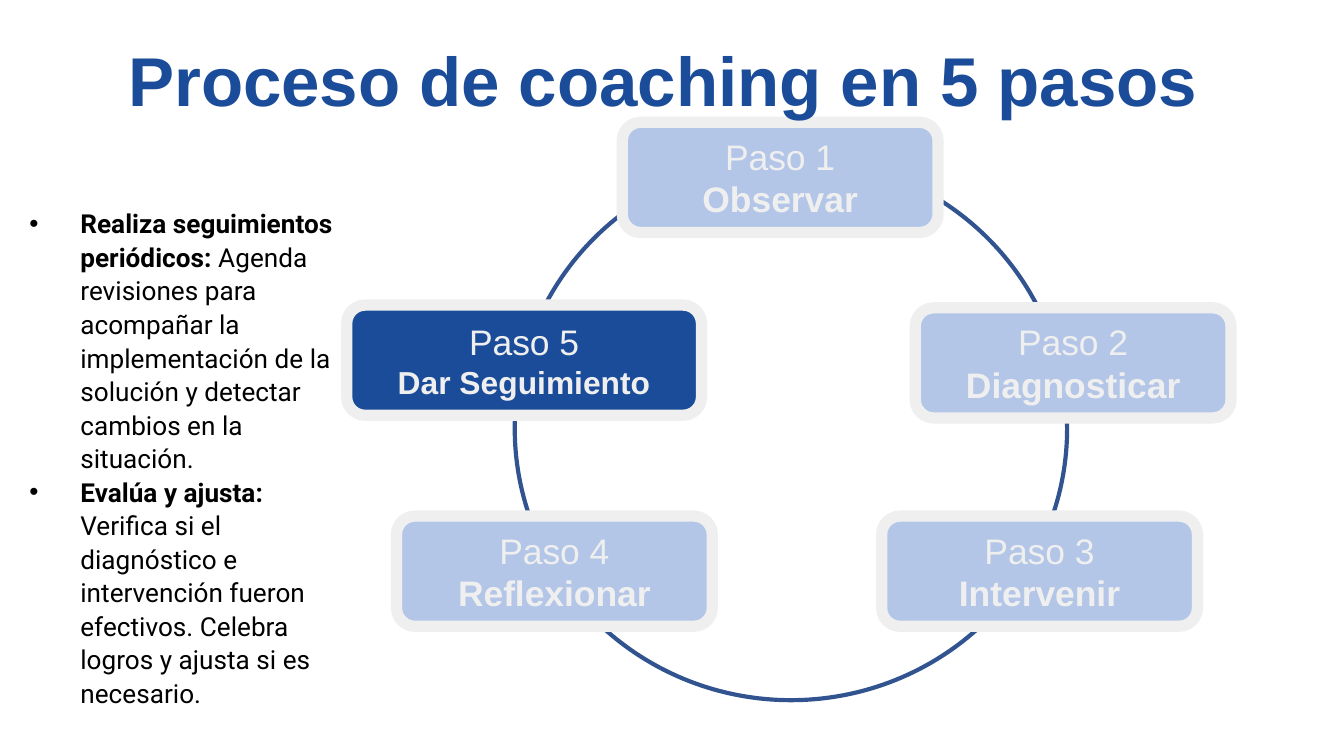
import pptx
import pptx.dml.color
import pptx.enum.shapes
import pptx.enum.text
import pptx.oxml.ns
import pptx.util
from lxml import etree

Inches = pptx.util.Inches
Pt = pptx.util.Pt
RGBColor = pptx.dml.color.RGBColor
MSO_SHAPE = pptx.enum.shapes.MSO_SHAPE
PP_ALIGN = pptx.enum.text.PP_ALIGN
MSO_ANCHOR = pptx.enum.text.MSO_ANCHOR
MSO_AUTO_SIZE = pptx.enum.text.MSO_AUTO_SIZE
qn = pptx.oxml.ns.qn

BLUE = RGBColor(0x1A, 0x4C, 0x99)
PALE_BLUE = RGBColor(0xB3, 0xC6, 0xE7)
RING_BLUE = RGBColor(0x31, 0x53, 0x8F)
LIGHT_GRAY = RGBColor(0xEF, 0xEF, 0xEF)
BLACK = RGBColor(0, 0, 0)


def add_run(p, text, *, size, color, font="Arial", bold=False):
    r = p.add_run()
    r.text = text
    r.font.name = font
    r.font.size = Pt(size)
    r.font.bold = bold
    r.font.color.rgb = color


def add_bullet(p, indent=0.38, tab=0.5):
    pPr = p._p.get_or_add_pPr()
    pPr.set("marL", str(Inches(indent)))
    pPr.set("indent", str(-Inches(indent)))
    clr = etree.SubElement(pPr, qn("a:buClr"))
    etree.SubElement(clr, qn("a:srgbClr"), val=str(BLACK))
    etree.SubElement(pPr, qn("a:buFont"), typeface="Arial")
    etree.SubElement(pPr, qn("a:buChar"), char="•")
    tabs = etree.SubElement(pPr, qn("a:tabLst"))
    etree.SubElement(tabs, qn("a:tab"), pos=str(Inches(tab)), algn="l")


class Slide:
    step_height = 0.82
    step_size = 19
    body_size = 14
    title_size = 37

    def __init__(self, prs):
        self.s = prs.slides.add_slide(prs.slide_layouts[6])

    def shape(self, kind, x, y, w, h, line, width, fill=None):
        sp = self.s.shapes.add_shape(kind, Inches(x), Inches(y), Inches(w), Inches(h))
        sp.shadow.inherit = False
        sp.line.color.rgb = line
        sp.line.width = Pt(width)
        if fill is None:
            sp.fill.background()
        else:
            sp.fill.solid()
            sp.fill.fore_color.rgb = fill
        return sp

    def margins(self, tf, side, top):
        tf.word_wrap = True
        tf.margin_left = tf.margin_right = Inches(side)
        tf.margin_top = tf.margin_bottom = Inches(top)

    def ring(self, x, y, w, h):
        self.shape(MSO_SHAPE.OVAL, x, y, w, h, RING_BLUE, 2.25)

    def step(self, number, name, x, y, w=2.35, fill=PALE_BLUE, name_size=step_size):
        sp = self.shape(MSO_SHAPE.ROUNDED_RECTANGLE, x, y, w, self.step_height,
                        LIGHT_GRAY, 6, fill)
        tf = sp.text_frame
        self.margins(tf, 0.1, 0.1)
        tf.vertical_anchor = MSO_ANCHOR.MIDDLE
        p = tf.paragraphs[0]
        p.alignment = PP_ALIGN.CENTER
        add_run(p, f"Paso {number}", size=self.step_size, color=LIGHT_GRAY)
        p = tf.add_paragraph()
        p.alignment = PP_ALIGN.CENTER
        add_run(p, name, size=name_size, color=LIGHT_GRAY, bold=True)

    def text_box(self, x, y, w, h, top):
        sp = self.s.shapes.add_textbox(Inches(x), Inches(y), Inches(w), Inches(h))
        self.margins(sp.text_frame, 0.1, top)
        return sp.text_frame

    def title(self, text, x, y, w, h):
        tf = self.text_box(x, y, w, h, top=0.1)
        tf.auto_size = MSO_AUTO_SIZE.SHAPE_TO_FIT_TEXT
        p = tf.paragraphs[0]
        p.alignment = PP_ALIGN.CENTER
        p.line_spacing = 0.9
        add_run(p, text, size=self.title_size, color=BLUE, bold=True)

    def bullets(self, items, x, y, w, h):
        tf = self.text_box(x, y, w, h, top=0.05)
        for i, (lead, rest) in enumerate(items):
            p = tf.add_paragraph() if i else tf.paragraphs[0]
            add_bullet(p)
            p.line_spacing = 1.07
            p.space_before = Pt(0)
            p.space_after = Pt(8 if i == len(items) - 1 else 0)
            for text, bold in ((lead, True), (" " + rest, False)):
                add_run(p, text, size=self.body_size, color=BLACK,
                        font="Roboto", bold=bold)


def main():
    prs = pptx.Presentation()
    prs.slide_width = Inches(10)
    prs.slide_height = Inches(10 * 9 / 16)  # widescreen 16:9
    slide = Slide(prs)

    # Cycle: ring behind the five steps, the current one highlighted
    slide.ring(3.83, 1.17, 4.11, 4.04)
    steps = [("Observar", 4.63, 0.91), ("Diagnosticar", 6.81, 2.29),
             ("Intervenir", 6.56, 3.84), ("Reflexionar", 2.95, 3.84)]
    for number, (name, x, y) in enumerate(steps, 1):
        slide.step(number, name, x, y)
    slide.step(5, "Dar Seguimiento", 2.58, 2.27, w=2.64, fill=BLUE, name_size=17)

    # Title
    slide.title("Proceso de coaching en 5 pasos ", 0.63, 0.25, 8.75, 0.76)

    # Advice for the current step
    slide.bullets([
        ("Realiza seguimientos periódicos:",
         "Agenda revisiones para acompañar la implementación de la solución "
         "y detectar cambios en la situación."),
        ("Evalúa y ajusta:",
         "Verifica si el diagnóstico e intervención fueron efectivos. "
         "Celebra logros y ajusta si es necesario."),
    ], 0.12, 1.48, 2.46, 3.62)

    prs.save("out.pptx")


if __name__ == "__main__":
    main()
